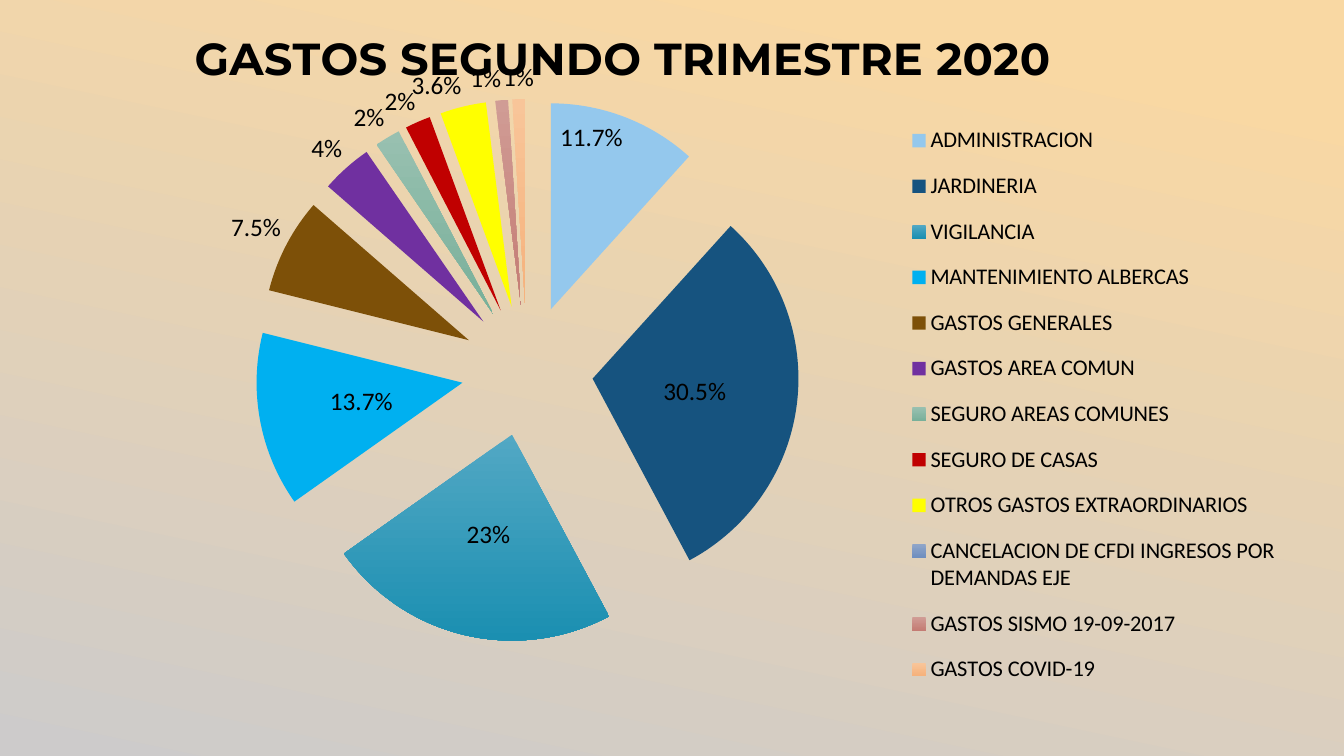
from dataclasses import dataclass

from pptx import Presentation
from pptx.chart.data import CategoryChartData
from pptx.dml.color import RGBColor
from pptx.enum.chart import XL_CHART_TYPE, XL_LABEL_POSITION, XL_LEGEND_POSITION
from pptx.oxml import parse_xml
from pptx.oxml.ns import nsdecls
from pptx.util import Inches, Pt

BLACK = "000000"
EXPLOSION = 32
INSIDE = XL_LABEL_POSITION.INSIDE_END
CENTER = XL_LABEL_POSITION.CENTER
OUTSIDE = XL_LABEL_POSITION.OUTSIDE_END


@dataclass
class Expense:
    name: str
    percent: float
    colors: tuple[str, ...]
    label: XL_LABEL_POSITION = OUTSIDE


EXPENSES = [
    Expense("ADMINISTRACION", 11.7, ("94C8ED",), INSIDE),
    Expense("JARDINERIA", 30.5, ("16537F",), CENTER),
    Expense("VIGILANCIA", 23, ("52A8C4", "1B8FB1"), CENTER),
    Expense("MANTENIMIENTO ALBERCAS", 13.7, ("00B0F0",), CENTER),
    Expense("GASTOS GENERALES", 7.5, ("7D5008",)),
    Expense("GASTOS AREA COMUN", 4, ("7030A0",)),
    Expense("SEGURO AREAS COMUNES", 2, ("98C0B0", "78B09A")),
    Expense("SEGURO DE CASAS", 2, ("C00000",)),
    Expense("OTROS GASTOS EXTRAORDINARIOS", 3.6, ("FFFF00",)),
    Expense("CANCELACION DE CFDI INGRESOS POR DEMANDAS EJE", 0, ("8FA5C9", "6F8FBF")),
    Expense("GASTOS SISMO 19-09-2017", 1, ("D09C95", "C47C74")),
    Expense("GASTOS COVID-19", 1, ("F8C599", "F6B27C")),
]


def rgb(color: str) -> RGBColor:
    return RGBColor.from_string(color)


def paint(fill, colors: tuple[str, ...], angle: float = 270, start: float = 0) -> None:
    """Fill solid for one colour, or as a gradient from start for two."""
    if len(colors) == 1:
        fill.solid()
        fill.fore_color.rgb = rgb(colors[0])
        return
    fill.gradient()
    fill.gradient_angle = angle
    for stop, color, position in zip(fill.gradient_stops, colors, (start, 1)):
        stop.color.rgb = rgb(color)
        stop.position = position


def style(font, size: float, name: str = "Calibri", bold: bool = False) -> None:
    font.size, font.name, font.bold = Pt(size), name, bold
    font.color.rgb = rgb(BLACK)


def place(element, index: int, target: str = "", **shares: float) -> None:
    """Give a chart part a manual layout in shares of the chart's size."""
    for old in element.xpath("./c:layout"):
        element.remove(old)
    inner = f'<c:layoutTarget val="{target}"/>' if target else ""
    modes = "".join(f'<c:{k}Mode val="edge"/>' for k in "xy")
    sizes = "".join(f'<c:{k} val="{v}"/>' for k, v in shares.items())
    element.insert(index, parse_xml(
        f'<c:layout {nsdecls("c")}><c:manualLayout>{inner}{modes}{sizes}'
        "</c:manualLayout></c:layout>"))


def explode(series) -> None:
    ser = series._element
    for follower in ser.xpath("./c:dPt[1] | ./c:dPt/c:spPr"):
        follower.addprevious(parse_xml(
            f'<c:explosion {nsdecls("c")} val="{EXPLOSION}"/>'))


def format_slices(plot) -> None:
    plot.vary_by_categories = True
    plot.has_data_labels = True
    labels = plot.series[0].data_labels
    labels.number_format = 'General"%";;""'
    labels.number_format_is_linked = False
    labels.show_value = True
    labels.position = OUTSIDE
    style(labels.font, 18)
    for i, expense in enumerate(EXPENSES):
        point = plot.series[0].points[i]
        paint(point.format.fill, expense.colors)
        if expense.label != OUTSIDE:
            style(point.data_label.font, 18)
            point.data_label.position = expense.label
    explode(plot.series[0])


def add_expense_pie(prs, s) -> None:
    data = CategoryChartData(number_format="General")
    data.categories = [e.name for e in EXPENSES]
    data.add_series("Series 1", [e.percent for e in EXPENSES])
    w, h = prs.slide_width, prs.slide_height
    chart = s.shapes.add_chart(
        XL_CHART_TYPE.PIE, int(w * 0.0855), int(h * 0.0147),
        int(w * 0.888), int(h * 0.9227), data).chart
    style(chart.font, 18)

    chart.has_title = True
    r = chart.chart_title.text_frame.paragraphs[0].add_run()
    r.text = "GASTOS SEGUNDO TRIMESTRE 2020"
    style(r.font, 32, "Montserrat", bold=True)
    place(chart.chart_title._element, 1, x=0.06, y=0.01)

    chart.has_legend = True
    chart.legend.position = XL_LEGEND_POSITION.BOTTOM
    chart.legend.include_in_layout = False
    style(chart.legend.font, 16)
    place(chart.legend._element, 1, x=0.66, y=0.14, w=0.32, h=0.85)

    format_slices(chart.plots[0])
    plot_area = chart._chartSpace.chart.plotArea
    place(plot_area, 0, "inner", x=0, y=0.126, w=0.691, h=0.779)


def main() -> None:
    prs = Presentation()
    prs.slide_width, prs.slide_height = Inches(13.33), Inches(7.5)
    s = prs.slides.add_slide(prs.slide_layouts[6])
    paint(s.background.fill, ("F9D8A3", "CDCBCB"), angle=258, start=0.1)
    add_expense_pie(prs, s)
    prs.save("out.pptx")


if __name__ == "__main__":
    main()
